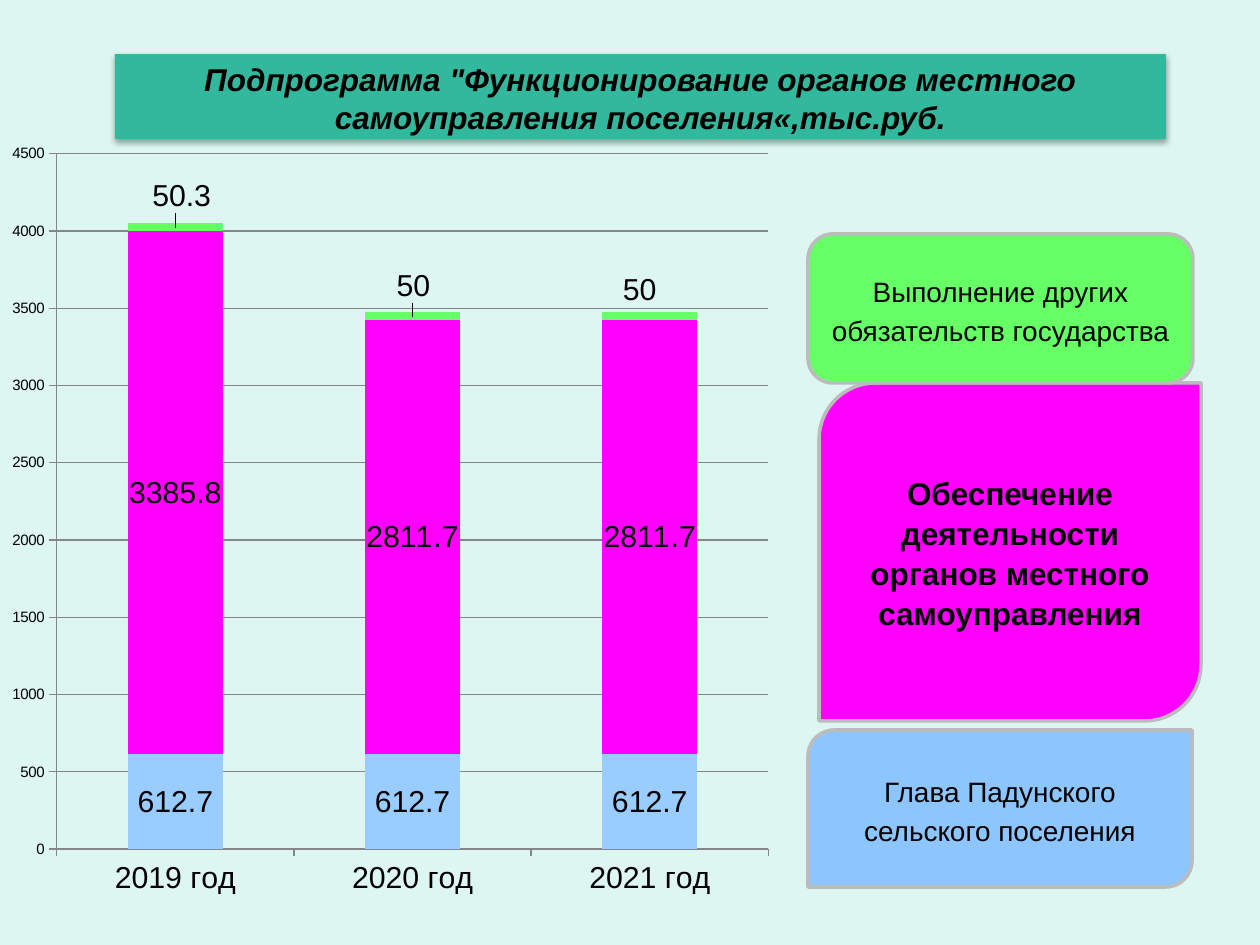
from lxml import etree
from pptx import Presentation, util as u
from pptx.chart.data import CategoryChartData
from pptx.dml.color import RGBColor
from pptx.enum import chart as ch, shapes, text
from pptx.oxml import parse_xml
from pptx.oxml.ns import nsdecls, qn

PX = 914400 / 126
COLORS = dict(bg="DEF6F1", title="32B89C", green="66FF66", magenta="FF00FF",
              blue="8DC6FF", bar_blue="99CCFF", border="BCBCBC",
              grid="868686", text="000000")
CHART_BOX = (0, 135, 789, 784)
YEARS = ("2019 год", "2020 год", "2021 год")
SERIES = (
    ("Глава поселения", (612.7, 612.7, 612.7), "bar_blue"),
    ("Органы местного самоуправления", (3385.8, 2811.7, 2811.7), "magenta"),
    ("Другие обязательства", (50.3, 50, 50), "green"),
)
LABEL_SHIFTS = ((6, -31), (1, -30), (-10, -26))  # px, top series


def px(*values):
    return [u.Emu(round(v * PX)) for v in values]


def rgb(name):
    return RGBColor.from_string(COLORS[name])


def fill(target, name):
    target.fill.solid()
    target.fill.fore_color.rgb = rgb(name)


def style_font(font, **formats):
    font.color.rgb = rgb("text")
    for key, value in dict(name="Arial", **formats).items():
        setattr(font, key, value)


def write(sp, words, size, anchor, spacing=1.0, **formats):
    tf = sp.text_frame
    inset_x, inset_y = px(12, 6)
    settings = dict(word_wrap=True, vertical_anchor=anchor,
                    auto_size=text.MSO_AUTO_SIZE.NONE,
                    margin_left=inset_x, margin_right=inset_x,
                    margin_top=inset_y, margin_bottom=inset_y)
    for key, value in settings.items():
        setattr(tf, key, value)
    p = tf.paragraphs[0]
    p.alignment, p.line_spacing = text.PP_ALIGN.CENTER, spacing
    p.space_before = u.Pt(0)
    r = p.add_run()
    r.text = words
    style_font(r.font, size=u.Pt(size), **formats)


def add_title(s, box, words):
    sp = s.shapes.title
    sp.left, sp.top, sp.width, sp.height = px(*box)
    fill(sp, "title")
    write(sp, words, 18, text.MSO_ANCHOR.TOP, bold=True, italic=True)
    # Soft shadow below the band
    sp._element.spPr.append(parse_xml(
        f'<a:effectLst {nsdecls("a")}><a:outerShdw blurRad="39400" dist="22900" '
        'dir="5400000" rotWithShape="0"><a:srgbClr val="000000">'
        '<a:alpha val="35000"/></a:srgbClr></a:outerShdw></a:effectLst>'))


def add_card(s, kind, box, color, words, size, spacing, bold=False):
    sp = s.shapes.add_shape(kind, *px(*box))
    sp.shadow.inherit = False
    sp.adjustments[0] = 0.167
    fill(sp, color)
    sp.line.color.rgb = rgb("border")
    sp.line.width = u.Pt(2)
    write(sp, words, size, text.MSO_ANCHOR.MIDDLE, spacing, bold=bold)


def manual_layout(**values):
    layout = etree.Element(qn("c:layout"))
    manual = etree.SubElement(layout, qn("c:manualLayout"))
    for key, value in values.items():
        etree.SubElement(manual, qn(f"c:{key}")).set("val", str(value))
    return layout


def style_axes(chart):
    value, category = chart.value_axis, chart.category_axis
    value.minimum_scale, value.maximum_scale, value.major_unit = 0, 4500, 500
    style_font(value.tick_labels.font, size=u.Pt(8.6))
    for axis in (value, category):
        axis.major_tick_mark = ch.XL_TICK_MARK.OUTSIDE
    for line in (value.format.line, category.format.line,
                 value.major_gridlines.format.line):
        line.color.rgb = rgb("grid")
        line.width = u.Pt(0.75)


def add_budget_chart(s):
    data = CategoryChartData(number_format="General")
    data.categories = YEARS
    for name, values, _ in SERIES:
        data.add_series(name, values)
    chart = s.shapes.add_chart(ch.XL_CHART_TYPE.COLUMN_STACKED,
                               *px(*CHART_BOX), data).chart
    chart.has_legend = chart.has_title = False
    style_font(chart.font, size=u.Pt(17.3))
    style_axes(chart)
    plot = chart.plots[0]
    plot.gap_width, plot.overlap, plot.vary_by_categories = 150, 100, False
    for series, (_, _, color) in zip(plot.series, SERIES):
        fill(series.format, color)
        series.data_labels.show_value = True
        style_font(series.data_labels.font, size=u.Pt(17.3))

    # Labels of the thin top series sit above the columns
    for i, (dx, dy) in enumerate(LABEL_SHIFTS):
        label = plot.series[2].points[i].data_label
        style_font(label.font, size=u.Pt(17.3))
        label._get_or_add_dLbl().insert(1, manual_layout(
            x=round(dx / CHART_BOX[2], 3), y=round(dy / CHART_BOX[3], 3)))

    # Fixed inner plot area
    area = chart._chartSpace.chart.plotArea
    for old in area.findall(qn("c:layout")):
        area.remove(old)
    area.insert(0, manual_layout(layoutTarget="inner", xMode="edge", yMode="edge",
                                 x=0.072, y=0.024, w=0.902, h=0.887))


def main():
    prs = Presentation()
    prs.slide_width, prs.slide_height = px(1260, 945)
    s = prs.slides.add_slide(prs.slide_layouts[5])
    fill(s.background, "bg")

    add_budget_chart(s)

    # Cards that name the series
    diagonal = shapes.MSO_SHAPE.ROUND_2_DIAG_RECTANGLE
    add_card(s, diagonal, (819, 383, 382, 338), "magenta",
             "Обеспечение деятельности органов местного самоуправления",
             18, 1.05, bold=True)
    add_card(s, diagonal, (808, 730, 384, 157), "blue",
             "Глава Падунского сельского поселения", 16, 1.15)
    add_card(s, shapes.MSO_SHAPE.ROUNDED_RECTANGLE, (808, 234, 385, 149), "green",
             "Выполнение других обязательств государства", 16, 1.15)

    add_title(s, (115, 54, 1051, 85),
              'Подпрограмма "Функционирование органов местного '
              "самоуправления поселения«,тыс.руб.")
    prs.save("out.pptx")


if __name__ == "__main__":
    main()
